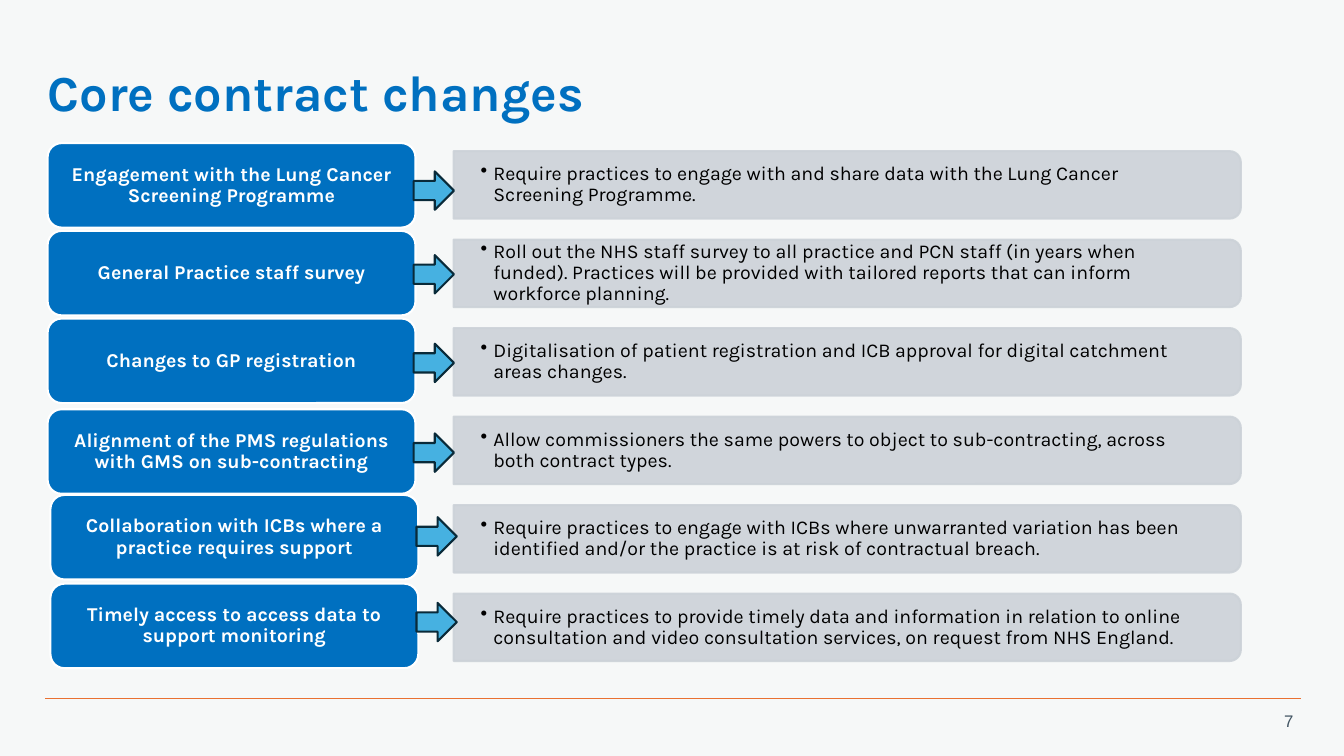
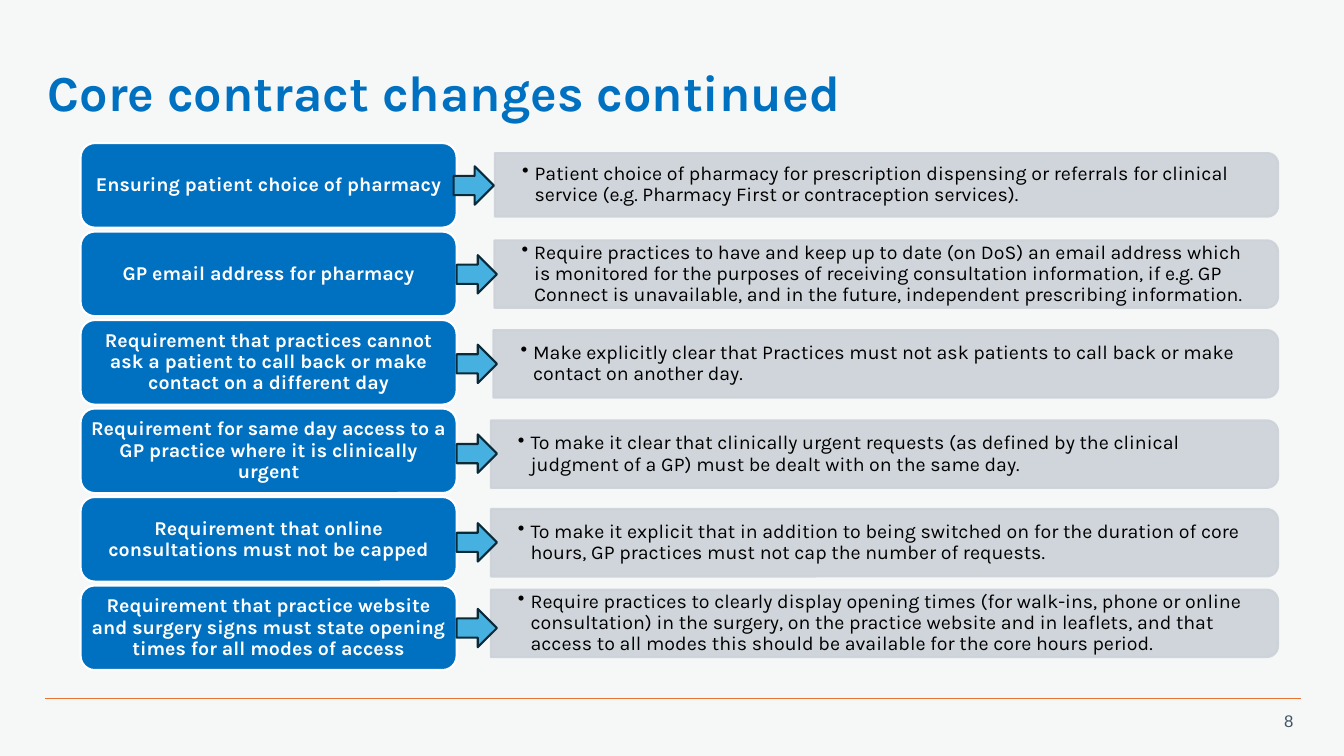
from pptx import Presentation
from pptx.dml.color import RGBColor
from pptx.enum.shapes import MSO_CONNECTOR as Connector, MSO_SHAPE as Shape
from pptx.enum.text import MSO_ANCHOR as Anchor, PP_ALIGN as Align
from pptx.oxml.ns import qn
from pptx.util import Pt
from lxml.etree import SubElement


def color(hex_code):
    return RGBColor.from_string(hex_code)


def apply(target, values):
    for name, value in values.items():
        setattr(target, name, value)


class Deck:
    BACKDROP, BLUE, PANEL, SKY = "F6F8F8", "0070C0", "CCD2D8", "46B1E1"
    WHITE, BLACK, NAVY = "FFFFFF", "000000", "092A39"
    ORANGE, SLATE = "E97132", "425563"
    TITLE = {"name": "Karla", "size": Pt(36), "bold": True}
    HEADING = {"name": "Karla", "size": Pt(14), "bold": True}
    DETAIL = {"name": "Karla", "size": Pt(14), "bold": False}
    NUMBER = {"name": "Arial", "size": Pt(12), "bold": False}
    CARD_HEIGHT = 60.4

    def __init__(self):
        self.prs = Presentation()
        apply(self.prs, {"slide_width": Pt(960), "slide_height": Pt(540)})
        self.slide = None

    def new_slide(self, title, number):
        self.slide = self.prs.slides.add_slide(self.prs.slide_layouts[6])
        backdrop = self.slide.background.fill
        backdrop.solid()
        backdrop.fore_color.rgb = color(self.BACKDROP)
        self.rule(32.4, 498.7, 929.5)
        self.text_box((901.4, 504, 29.5, 21.6), str(number), self.NUMBER, self.SLATE,
                      margins=(0, 3.6, 7.2, 3.6), spacing=1, align=Align.RIGHT)
        self.text_box((34, 34, 898, 68.4), title, self.TITLE, self.BLUE)

    def rule(self, left, y, right):
        line = self.slide.shapes.add_connector(
            Connector.STRAIGHT, Pt(left), Pt(y), Pt(right), Pt(y))
        apply(line.line, {"width": Pt(0.5)})
        line.line.color.rgb = color(self.ORANGE)
        SubElement(line._element.spPr, qn("a:effectLst"))

    def fill_text(self, frame, text, font, ink, margins=(0, 0, 0, 0),
                  spacing=0.9, align=Align.LEFT, bullet=False):
        sides = ("margin_left", "margin_top", "margin_right", "margin_bottom")
        apply(frame, dict(zip(sides, map(Pt, margins))))
        apply(frame, {"word_wrap": True, "vertical_anchor": Anchor.MIDDLE})
        paragraph = frame.paragraphs[0]
        if bullet:
            properties = paragraph._p.get_or_add_pPr()
            properties.set("marL", str(Pt(9)))
            properties.set("indent", str(-Pt(9)))
            SubElement(properties, qn("a:buChar")).set("char", "•")
        apply(paragraph, {"alignment": align, "line_spacing": spacing})
        run = paragraph.add_run()
        run.text = text
        apply(run.font, font)
        run.font.color.rgb = color(ink)

    def text_box(self, box, text, font, ink, **layout):
        frame = self.slide.shapes.add_textbox(*map(Pt, box)).text_frame
        self.fill_text(frame, text, font, ink, **layout)

    def shape(self, preset, box, fill, outline):
        shape = self.slide.shapes.add_shape(preset, *map(Pt, box))
        shape.shadow.inherit = False
        shape.fill.solid()
        shape.fill.fore_color.rgb = color(fill)
        shape.line.color.rgb = color(outline)
        shape.line.width = Pt(1.5)
        return shape

    def panel(self, left, middle, right, height, text):
        width = right - left
        box = ((left + right - height) / 2, middle - width / 2, height, width)
        panel = self.shape(Shape.ROUND_2_SAME_RECTANGLE, box, self.PANEL, self.PANEL)
        panel.rotation = 90
        for tint in panel._element.spPr.iter(qn("a:srgbClr")):
            SubElement(tint, qn("a:alpha")).set("val", "90000")
        self.text_box((left, middle - height / 2 + 2.4, width - 2.4, height - 4.8),
                      text, self.DETAIL, self.BLACK,
                      margins=(19.4, 10, 19.4, 10), bullet=True)

    def card(self, left, top, width, text):
        card = self.shape(Shape.ROUNDED_RECTANGLE, (left, top, width, self.CARD_HEIGHT),
                          self.BLUE, self.WHITE)
        self.fill_text(card.text_frame, text, self.HEADING, self.WHITE,
                       margins=(4, 2, 4, 2), align=Align.CENTER)

    def arrow(self, left, top):
        self.shape(Shape.RIGHT_ARROW, (left, top, 28.8, 27.4), self.SKY, self.NAVY)

    def changes(self, rows, cards, card_width, panels, panel_right, arrows):
        for (heading, detail), card, panel in zip(rows, cards, panels):
            left, middle, height = panel
            self.panel(left, middle, panel_right, height, detail)
            self.card(*card, card_width, heading)
        for arrow in arrows:
            self.arrow(*arrow)


CORE = [
    ("Engagement with the Lung Cancer Screening Programme",
     "Require practices to engage with and share data with the Lung Cancer "
     "Screening Programme."),
    ("General Practice staff survey",
     "Roll out the NHS staff survey to all practice and PCN staff (in years when "
     "funded). Practices will be provided with tailored reports that can inform "
     "workforce planning."),
    ("Changes to GP registration",
     "Digitalisation of patient registration and ICB approval for digital catchment "
     "areas changes."),
    ("Alignment of the PMS regulations with GMS on sub-contracting",
     "Allow commissioners the same powers to object to sub-contracting, across "
     "both contract types."),
    ("Collaboration with ICBs where a practice requires support",
     "Require practices to engage with ICBs where unwarranted variation has been "
     "identified and/or the practice is at risk of contractual breach."),
    ("Timely access to access data to support monitoring",
     "Require practices to provide timely data and information in relation to online "
     "consultation and video consultation services, on request from NHS England."),
]

CONTINUED = [
    ("Ensuring patient choice of pharmacy",
     "Patient choice of pharmacy for prescription dispensing or referrals for clinical "
     "service (e.g. Pharmacy First or contraception services)."),
    ("GP email address for pharmacy",
     "Require practices to have and keep up to date (on DoS) an email address which "
     "is monitored for the purposes of receiving consultation information, if e.g. GP "
     "Connect is unavailable, and in the future, independent prescribing information."),
    ("Requirement that practices cannot ask a patient to call back or make contact "
     "on a different day",
     "Make explicitly clear that Practices must not ask patients to call back or make "
     "contact on another day."),
    ("Requirement for same day access to a GP practice where it is clinically urgent",
     "To make it clear that clinically urgent requests (as defined by the clinical "
     "judgment of a GP) must be dealt with on the same day."),
    ("Requirement that online consultations must not be capped",
     "To make it explicit that in addition to being switched on for the duration of core "
     "hours, GP practices must not cap the number of requests."),
    ("Requirement that practice website and surgery signs must state opening times "
     "for all modes of access",
     "Require practices to clearly display opening times (for walk-ins, phone or online "
     "consultation) in the surgery, on the practice website and in leaflets, and that "
     "access to all modes this should be available for the core hours period."),
]

PITCH = 63.2


def main():
    deck = Deck()

    deck.new_slide("Core contract changes", 7)
    lefts = [34] * 4 + [36] * 2
    deck.changes(
        CORE,
        cards=list(zip(lefts, [102.2, 164.9, 227.5, 292.3, 353.5, 416.9])),
        card_width=262.8,
        panels=[(324, 132.1 + PITCH * row, 48.2) for row in range(len(CORE))],
        panel_right=886.3,
        arrows=[(left + 261.5, top) for left, top in
                zip(lefts, [122.4, 182.2, 245.5, 309.6, 369.4, 430.6])])

    deck.new_slide("Core contract changes continued", 8)
    deck.changes(
        CONTINUED,
        cards=[(57.6, 102.2 + PITCH * row) for row in range(len(CONTINUED))],
        card_width=268.6,
        panels=list(zip([353.5, 353.2, 352.4] + [350.6] * 3,
                        [132.1, 195.8, 259.9, 324.4, 387.7, 445.3],
                        [45.4] + [48.2] * 5)),
        panel_right=912.9,
        arrows=list(zip([324] + [326.2] * 5,
                        [118.8, 182.2, 246.2, 310.3, 373.7, 434.9])))

    deck.prs.save("out.pptx")


if __name__ == "__main__":
    main()
